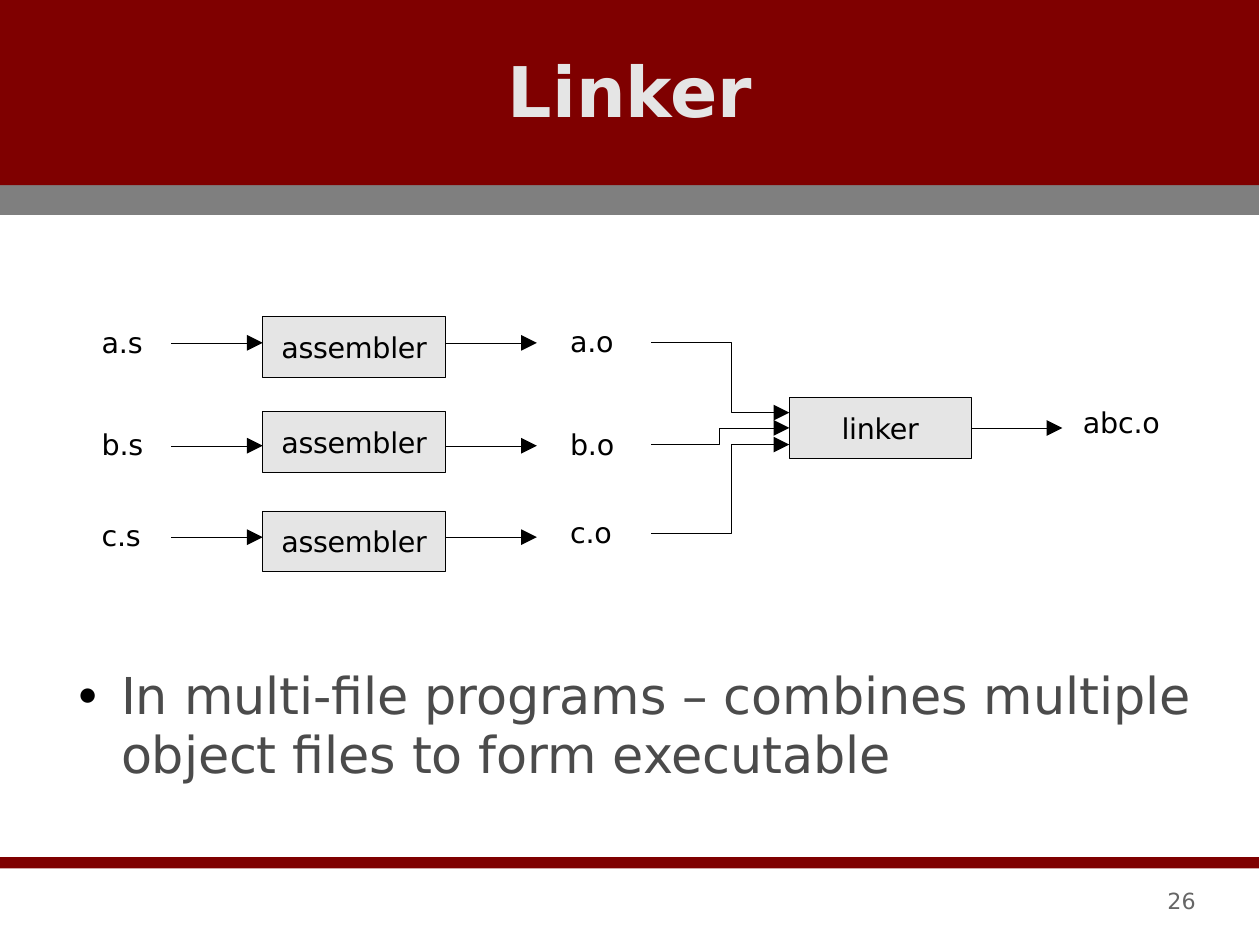
import dataclasses

import lxml.etree
import pptx
import pptx.dml.color
import pptx.enum.shapes
import pptx.enum.text
import pptx.oxml.ns
import pptx.util

PX = 9144  # one hundredth of an inch
qn = pptx.oxml.ns.qn
SHAPE = pptx.enum.shapes.MSO_SHAPE
LINK = pptx.enum.shapes.MSO_CONNECTOR
ALIGN = pptx.enum.text.PP_ALIGN
ANCHOR = pptx.enum.text.MSO_ANCHOR


@dataclasses.dataclass(frozen=True)
class Theme:
    font: str = "DejaVu Sans"
    mark: str = "Calibri"
    red: str = "7F0000"
    gray: str = "7F7F7F"
    pale: str = "E5E5E5"
    ink: str = "000000"
    prose: str = "4B4B4B"
    faint: str = "666666"
    title: int = 44
    body: int = 32
    label: int = 18
    number: int = 14
    lead: float = 37.3
    line: float = 0.25


THEME = Theme()


def emu(*sizes):
    return [pptx.util.Emu(size * PX) for size in sizes]


def color(code):
    return pptx.dml.color.RGBColor.from_string(code)


def place(shape, box):
    shape.left, shape.top, shape.width, shape.height = emu(*box)


def write(shape, text, size, ink, align=ALIGN.LEFT, bold=False, track=0):
    """Fill a shape with one run; track is letter spacing in 1/100 pt."""
    frame = shape.text_frame
    frame.auto_size = pptx.enum.text.MSO_AUTO_SIZE.NONE
    frame.word_wrap = True
    frame.vertical_anchor = ANCHOR.MIDDLE
    frame.margin_left = frame.margin_right = 0
    frame.margin_top = frame.margin_bottom = 0
    para = frame.paragraphs[0]
    para.alignment = align
    para.space_before = pptx.util.Pt(0)
    run = para.add_run()
    run.text = text
    font = run.font
    font.name, font.size, font.bold = THEME.font, pptx.util.Pt(size), bold
    font.color.rgb = color(ink)
    if track:
        run._r.get_or_add_rPr().set("spc", str(track))
    return para


def label(slide, box, text, size=THEME.label, ink=THEME.ink, track=-15):
    write(slide.shapes.add_textbox(*emu(*box)), text, size, ink, track=track)


def block(slide, box, fill):
    shape = slide.shapes.add_shape(SHAPE.RECTANGLE, *emu(*box))
    shape.shadow.inherit = False
    shape.fill.solid()
    shape.fill.fore_color.rgb = color(fill)
    shape.line.fill.background()
    return shape


def stage(slide, box, text):
    """Draw an outlined processing step."""
    shape = block(slide, box, THEME.pale)
    shape.line.color.rgb = color(THEME.ink)
    shape.line.width = pptx.util.Pt(THEME.line)
    write(shape, text, THEME.label, THEME.ink, ALIGN.CENTER, track=-20)
    return shape


def arrow(slide, start, end, bend=None):
    """Draw an arrow; bend is the x of an elbow's upright part."""
    kind = LINK.STRAIGHT if bend is None else LINK.ELBOW
    link = slide.shapes.add_connector(kind, *emu(*start, *end))
    link.line.color.rgb = color(THEME.ink)
    link.line.width = pptx.util.Pt(THEME.line)
    props = link._element.spPr
    head = lxml.etree.SubElement(props.find(qn("a:ln")), qn("a:tailEnd"))
    for key, value in (("type", "triangle"), ("w", "lg"), ("len", "lg")):
        head.set(key, value)
    lxml.etree.SubElement(props, qn("a:effectLst"))
    if bend is not None:
        ratio = round(100000 * (bend - start[0]) / (end[0] - start[0]))
        guides = props.find(qn("a:prstGeom")).find(qn("a:avLst"))
        guide = lxml.etree.SubElement(guides, qn("a:gd"))
        guide.set("name", "adj1")
        guide.set("fmla", f"val {ratio}")
    return link


def bands(slide, wide):
    """Lay the coloured bands behind everything else."""
    tree = slide.shapes._spTree
    for top, tall, fill in ((750, 10, THEME.red), (0, 162, THEME.red),
                            (162, 26, THEME.gray)):
        band = block(slide, (0, top, wide, tall), fill)
        tree.insert(2, band._element)


def heading(slide, box, text):
    title = slide.shapes.title
    place(title, box)
    write(title, text, THEME.title, THEME.pale, ALIGN.CENTER, bold=True)


def bullet(slide, box, text):
    body = slide.placeholders[1]
    place(body, box)
    para = write(body, text, THEME.body, THEME.prose, track=-8)
    body.text_frame.vertical_anchor = ANCHOR.TOP
    body.text_frame.margin_top = emu(6)[0]
    para.line_spacing = pptx.util.Pt(THEME.lead)
    props = para._p.get_or_add_pPr()
    props.set("marL", str(38 * PX))
    props.set("indent", str(-38 * PX))
    tint = lxml.etree.SubElement(props, qn("a:buClr"))
    lxml.etree.SubElement(tint, qn("a:srgbClr")).set("val", THEME.ink)
    for tag, key, value in (("a:buSzPct", "val", "80000"),
                            ("a:buFont", "typeface", THEME.mark),
                            ("a:buChar", "char", "•")):
        lxml.etree.SubElement(props, qn(tag)).set(key, value)


def source(slide, left, axis, name, shifts):
    """Draw one row, source file to object file, around its arrow axis."""
    box, before, after = shifts
    label(slide, (left, axis + before, 41, 33), f"{name}.s")
    stage(slide, (left + 141, axis + box, 160, 53), "assembler")
    label(slide, (left + 410, axis + after, 41, 33), f"{name}.o")
    for start in (left + 61, left + 301):
        arrow(slide, (start, axis), (start + 80, axis))


def diagram(slide, left, top):
    rows = (("a", 23, (-23, -17, -18)), ("b", 113, (-30, -18, -18)),
            ("c", 193, (-23, -18, -21)))
    for name, drop, shifts in rows:
        source(slide, left, top + drop, name, shifts)
    edge, mid = left + 602, top + 98
    linker = stage(slide, (edge, top + 71, 159, 53), "linker")
    for start, end, bend in ((22, mid - 14, 551), (112, mid, 541),
                             (190, mid + 14, 551)):
        link = arrow(slide, (left + 481, top + start), (edge, end),
                     left + bend)
        if end == mid:
            link.end_connect(linker, 1)
    out = arrow(slide, (edge + 159, mid), (edge + 239, mid))
    out.begin_connect(linker, 3)
    out.end_y = out.begin_y
    label(slide, (left + 859, top + 76, 70, 33), "abc.o")


def main():
    deck = pptx.Presentation()
    deck.slide_width, deck.slide_height = emu(1103, 826)
    slide = deck.slides.add_slide(deck.slide_layouts[1])
    bands(slide, 1102)
    heading(slide, (442, 40, 219, 76), "Linker")
    diagram(slide, 89, 277)
    label(slide, (1022, 776, 38, 24), "26", THEME.number, THEME.faint, 0)
    bullet(slide, (68, 576, 980, 108),
           "In multi-file programs – combines multiple object files "
           "to form executable")
    deck.save("out.pptx")


if __name__ == "__main__":
    main()
